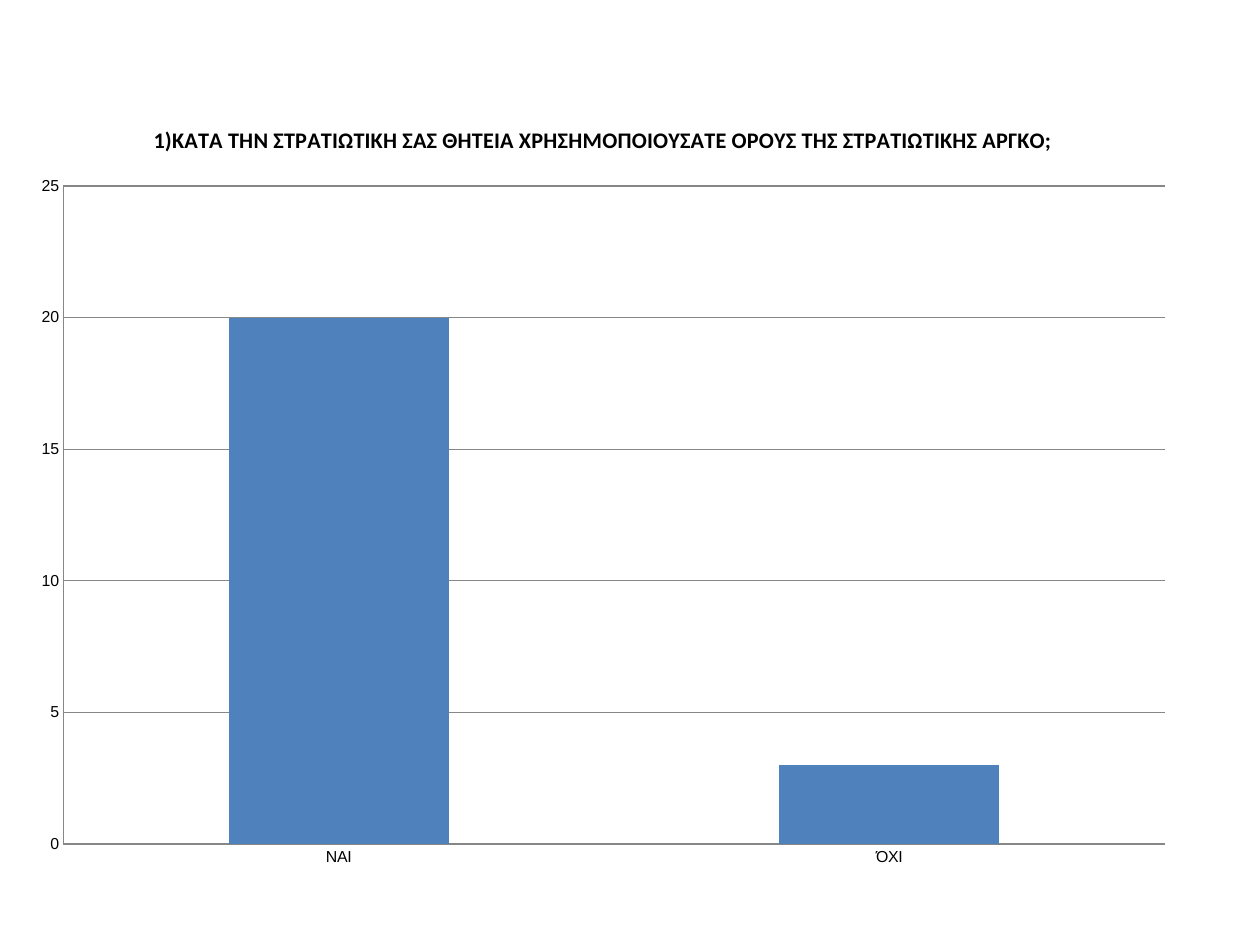
from lxml import etree
from pptx import Presentation
from pptx.chart.data import CategoryChartData
from pptx.dml.color import RGBColor
from pptx.enum.chart import XL_CHART_TYPE, XL_TICK_MARK
from pptx.oxml.ns import qn
from pptx.util import Cm, Pt

COLUMNS = XL_CHART_TYPE.COLUMN_CLUSTERED
NO_TICKS = XL_TICK_MARK.NONE
BLACK = RGBColor(0x00, 0x00, 0x00)
GREY = RGBColor(0x87, 0x87, 0x87)
BLUE = RGBColor(0x4F, 0x81, 0xBD)

QUESTION = ("1)ΚΑΤΑ ΤΗΝ ΣΤΡΑΤΙΩΤΙΚΗ ΣΑΣ ΘΗΤΕΙΑ ΧΡΗΣΗΜΟΠΟΙΟΥΣΑΤΕ "
            "ΟΡΟΥΣ ΤΗΣ ΣΤΡΑΤΙΩΤΙΚΗΣ ΑΡΓΚΟ;")
ANSWERS = {"ΝΑΙ": 20, "ΌΧΙ": 3}


def place(element, index, settings):
    """Give a chart part a manual layout, in fractions of the chart."""
    for old in element.findall(qn("c:layout")):
        element.remove(old)
    layout = etree.Element(qn("c:layout"))
    manual = etree.SubElement(layout, qn("c:manualLayout"))
    for key, value in settings.items():
        etree.SubElement(manual, qn(f"c:{key}")).set("val", str(value))
    element.insert(index, layout)


prs = Presentation()
prs.slide_width = Cm(28)
prs.slide_height = Cm(21)
slide = prs.slides.add_slide(prs.slide_layouts[6])

answers = CategoryChartData()
answers.categories = list(ANSWERS)
answers.add_series("Series 1", list(ANSWERS.values()))
chart = slide.shapes.add_chart(
    COLUMNS, Cm(0.41), Cm(2.21), Cm(26.01), Cm(17.4), answers).chart
chart.has_legend = False

chart.has_title = True
question = chart.chart_title
question.text_frame.text = QUESTION
question.include_in_layout = True
fonts = [
    (chart.font, {"name": "Arial", "size": Pt(10)}),
    (question.text_frame.paragraphs[0].runs[0].font,
     {"name": "Calibri", "size": Pt(14), "bold": True}),
]
for font, formats in fonts:
    for key, value in formats.items():
        setattr(font, key, value)
    font.color.rgb = BLACK

scale = chart.value_axis
scale_format = {"minimum_scale": 0, "maximum_scale": 25, "major_unit": 5,
                "has_major_gridlines": True}
for key, value in scale_format.items():
    setattr(scale, key, value)
for axis in (scale, chart.category_axis):
    axis.major_tick_mark = NO_TICKS
    axis.minor_tick_mark = NO_TICKS
for line in (scale.major_gridlines.format.line, scale.format.line,
             chart.category_axis.format.line):
    line.color.rgb = GREY
    line.width = Pt(0.75)

bars = chart.plots[0]
bars.gap_width = 150
bars.vary_by_categories = False
bars.series[0].format.fill.solid()
bars.series[0].format.fill.fore_color.rgb = BLUE

chart_part = chart.element.find(qn("c:chart"))
plot_area = chart_part.find(qn("c:plotArea"))
# The axes rely on the default visibility
for flag in list(plot_area.iter(qn("c:delete"))):
    flag.getparent().remove(flag)
place(chart_part.find(qn("c:title")), 1,
      {"xMode": "edge", "yMode": "edge", "x": 0.112, "y": 0.027})
place(plot_area, 0,
      {"layoutTarget": "inner", "xMode": "edge", "yMode": "edge",
       "x": 0.0385, "y": 0.1105, "w": 0.941, "h": 0.8405})

prs.save("out.pptx")
